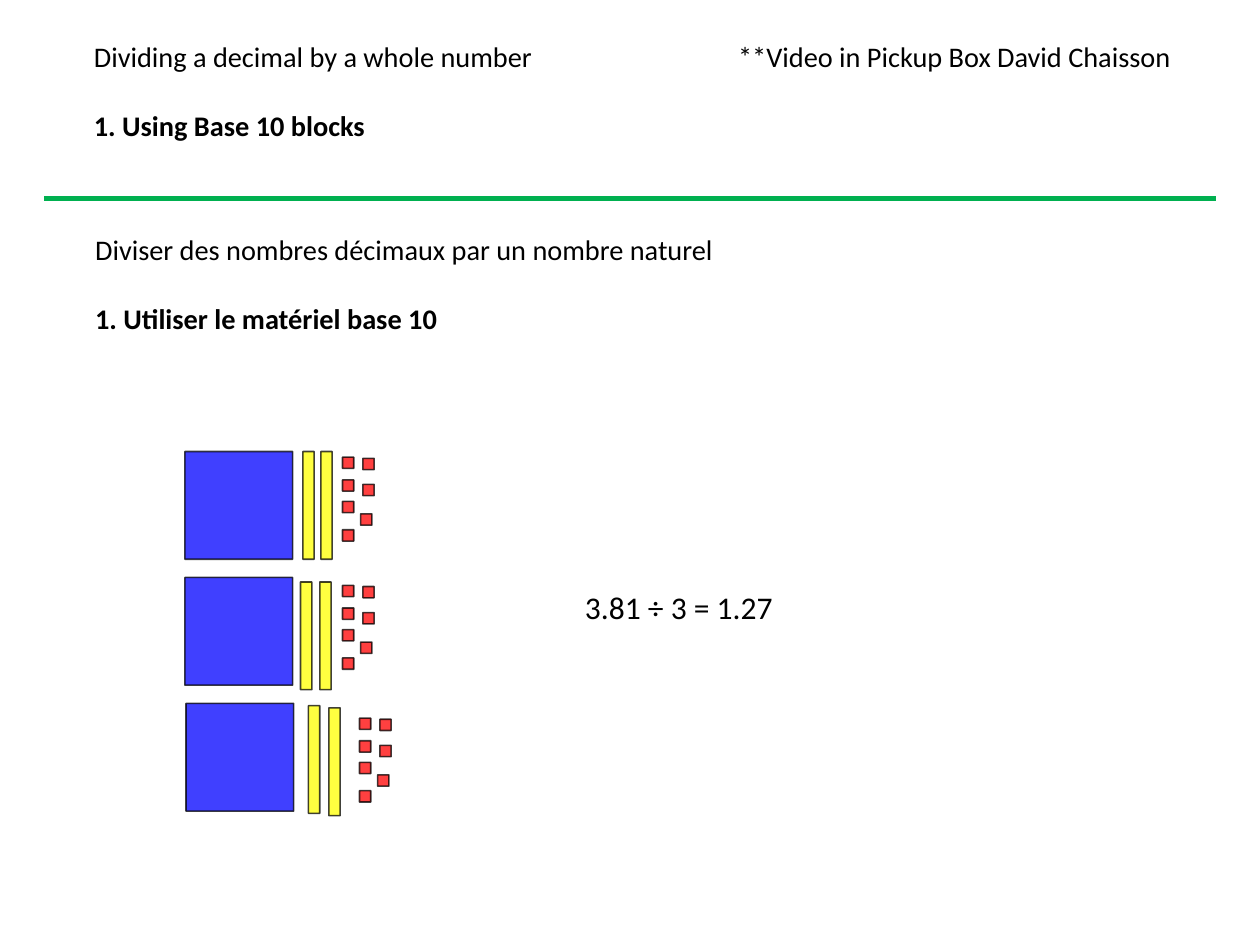
from lxml import etree
from pptx import Presentation
from pptx.dml.color import RGBColor
from pptx.enum.shapes import MSO_CONNECTOR, MSO_SHAPE
from pptx.enum.text import MSO_AUTO_SIZE
from pptx.oxml.ns import qn
from pptx.util import Inches, Pt

RECT = MSO_SHAPE.RECTANGLE
STRAIGHT = MSO_CONNECTOR.STRAIGHT
GROW = MSO_AUTO_SIZE.SHAPE_TO_FIT_TEXT

BLACK = RGBColor(0x00, 0x00, 0x00)
BLUE = RGBColor(0x00, 0x00, 0xFF)
YELLOW = RGBColor(0xFF, 0xFF, 0x00)
RED = RGBColor(0xFF, 0x00, 0x00)
GREEN = RGBColor(0x00, 0xB0, 0x50)

FONT = "Calibri"
SIDE = 0.95  # side of a flat, length of a rod
UNIT = 0.1   # side of a unit, width of a rod

# Each row: corner of the flat, corners of the rods, corner of the units
ROWS = [
    ((1.63, 3.98), [(2.67, 3.98), (2.83, 3.98)], (3.02, 4.03)),
    ((1.63, 5.09), [(2.65, 5.13), (2.82, 5.13)], (3.02, 5.16)),
    ((1.64, 6.2), [(2.72, 6.22), (2.9, 6.24)], (3.17, 6.33)),
]
# Places of the seven units from their shared corner
UNITS = [(0, 0), (0, 0.2), (0, 0.39), (0, 0.64),
         (0.18, 0.01), (0.18, 0.24), (0.16, 0.5)]


def add_text(slide, left, top, width, height, text, size=18, title=None):
    box = slide.shapes.add_textbox(
        Inches(left), Inches(top), Inches(width), Inches(height))
    frame = box.text_frame
    frame.word_wrap = True
    frame.auto_size = GROW
    frame.text = text
    if title:
        para = frame.add_paragraph()
        para.text = title
        para.space_before = Pt(22)
        para.font.bold = True
    for para in frame.paragraphs:
        for run in para.runs:
            run.font.name = FONT
            run.font.size = Pt(size)
            run.font.color.rgb = BLACK
            run.font.bold = para.font.bold


def add_block(slide, left, top, width, height, color):
    block = slide.shapes.add_shape(
        RECT, Inches(left), Inches(top), Inches(width), Inches(height))
    block.shadow.inherit = False
    block.fill.solid()
    block.fill.fore_color.rgb = color
    block.line.color.rgb = BLACK
    block.line.width = Pt(1)
    # Fill and outline are 75% opaque
    for tint in block.element.spPr.iter(qn("a:srgbClr")):
        etree.SubElement(tint, qn("a:alpha")).set("val", "75000")


def add_row(slide, flat, rods, corner):
    add_block(slide, *flat, SIDE, SIDE, BLUE)
    for rod in rods:
        add_block(slide, *rod, UNIT, SIDE, YELLOW)
    left, top = corner
    for right, down in UNITS:
        add_block(slide, left + right, top + down, UNIT, UNIT, RED)


def add_rule(slide, left, right, top):
    rule = slide.shapes.add_connector(
        STRAIGHT, Inches(left), Inches(top), Inches(right), Inches(top))
    rule.line.color.rgb = GREEN
    rule.line.width = Pt(3)
    etree.SubElement(rule.element.spPr, qn("a:effectLst"))


def main():
    deck = Presentation()
    deck.slide_width = Inches(11.11)
    deck.slide_height = Inches(8.33)
    slide = deck.slides.add_slide(deck.slide_layouts[6])

    # French and English headings
    add_text(slide, 0.74, 2, 8.82, 1.01,
             "Diviser des nombres décimaux par un nombre naturel",
             title="1. Utiliser le matériel base 10")
    add_text(slide, 0.73, 0.3, 4.54, 1.01,
             "Dividing a decimal by a whole number",
             title="1. Using Base 10 blocks")

    # Sum and its base 10 blocks
    add_text(slide, 5.06, 5.13, 2.44, 0.44, "3.81 ÷ 3 = 1.27", size=20)
    for row in ROWS:
        add_row(slide, *row)

    # Divider and video note
    add_rule(slide, 0.39, 10.72, 1.75)
    add_text(slide, 6.41, 0.3, 4.07, 0.4,
             "**Video in Pickup Box David Chaisson")

    deck.save("out.pptx")


if __name__ == "__main__":
    main()
